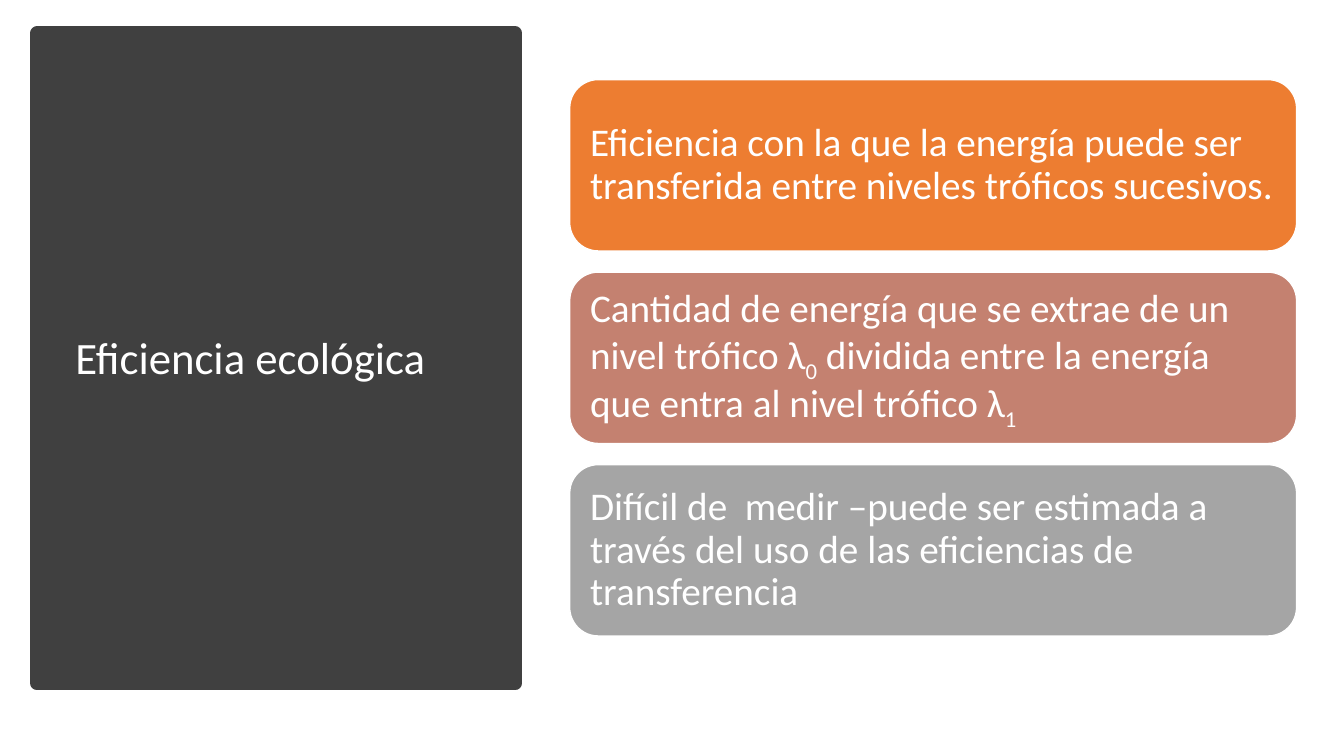
import pptx
import pptx.dml.color
import pptx.enum.shapes
import pptx.enum.text
import pptx.util

Inches = pptx.util.Inches
SHAPES = pptx.enum.shapes.MSO_SHAPE


def add_block(slide, preset, box, fill, line, line_width):
    shape = slide.shapes.add_shape(preset, *[Inches(length) for length in box])
    shape.shadow.inherit = False
    shape.fill.solid()
    shape.fill.fore_color.rgb = pptx.dml.color.RGBColor.from_string(fill)
    shape.line.color.rgb = pptx.dml.color.RGBColor.from_string(line)
    shape.line.width = pptx.util.Pt(line_width)
    return shape


def write_text(shape, text, size, inset, color="FFFFFF", font="Calibri"):
    """Fill the shape with one paragraph; a character after "_" is a subscript."""
    frame = shape.text_frame
    frame.word_wrap = True
    frame.vertical_anchor = pptx.enum.text.MSO_ANCHOR.MIDDLE
    frame.margin_left = frame.margin_right = Inches(inset)
    frame.margin_top = frame.margin_bottom = Inches(inset)
    paragraph = frame.paragraphs[0]
    paragraph.alignment = pptx.enum.text.PP_ALIGN.LEFT
    paragraph.line_spacing = 0.9
    first, *others = text.split("_")
    pieces = [(first, False)]
    for other in others:
        pieces += [(other[0], True), (other[1:], False)]
    for piece, is_subscript in pieces:
        if not piece:
            continue
        run = paragraph.add_run()
        run.text = piece
        run.font.name = font
        run.font.size = pptx.util.Pt(size)
        run.font.color.rgb = pptx.dml.color.RGBColor.from_string(color)
        if is_subscript:
            run._r.get_or_add_rPr().set("baseline", "-25000")


presentation = pptx.Presentation()
presentation.slide_width = Inches(13.33)
presentation.slide_height = Inches(7.5)
slide = presentation.slides.add_slide(presentation.slide_layouts[6])

# Title panel
add_block(slide, SHAPES.RECTANGLE, (0.37, 0.33, 4.74, 6.45), "404040", "404040", 10)
title = slide.shapes.add_textbox(Inches(0.65), Inches(0.7), Inches(4.16), Inches(5.75))
write_text(title, "Eficiencia ecológica", size=32, inset=0.1)

# Stacked statements
statements = [
    ("ED7D31", "Eficiencia con la que la energía puede ser transferida entre "
               "niveles tróficos sucesivos."),
    ("C48170", "Cantidad de energía que se extrae de un nivel trófico λ_0 dividida "
               "entre la energía que entra al nivel trófico λ_1"),
    ("A5A5A5", "Difícil de  medir –puede ser estimada a través del uso de las "
               "eficiencias de transferencia"),
]
first_top, pitch = 0.79, 1.91
for index, (fill, text) in enumerate(statements):
    box = (5.65, first_top + index * pitch, 7.21, 1.7)
    card = add_block(slide, SHAPES.ROUNDED_RECTANGLE, box, fill, "FFFFFF", 1)
    write_text(card, text, size=28, inset=0.12)

presentation.save("out.pptx")
